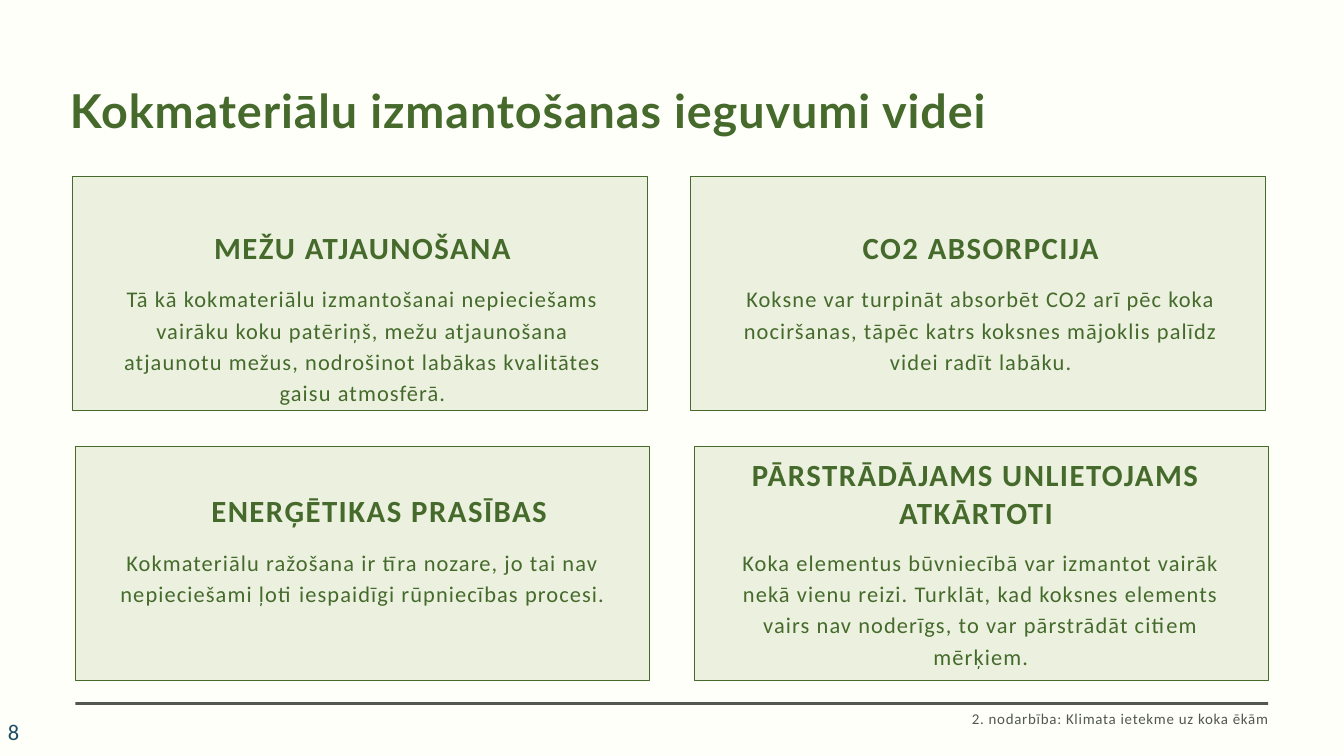
from dataclasses import dataclass

from pptx import Presentation
from pptx.dml.color import RGBColor
from pptx.enum.shapes import MSO_SHAPE
from pptx.enum.text import MSO_ANCHOR, MSO_AUTO_SIZE, PP_ALIGN
from pptx.util import Inches, Pt


@dataclass(frozen=True)
class TextStyle:
    size: float
    color: str
    spacing: float
    line_height: float = None
    bold: bool = False
    font: str = "Calibri"
    align: PP_ALIGN = PP_ALIGN.LEFT


@dataclass(frozen=True)
class Theme:
    background: str = "FEFFF8"
    green: str = "456A2C"
    card_fill: str = "EBF1DE"
    rule: str = "52584D"
    title: TextStyle = TextStyle(50, "456A2C", 1, 66.8, True, "Lato")
    heading: TextStyle = TextStyle(33, "456A2C", 1.6, 41.2, True, align=PP_ALIGN.CENTER)
    body: TextStyle = TextStyle(24, "456A2C", 1.2, 33.6, align=PP_ALIGN.CENTER)
    footer: TextStyle = TextStyle(16, "52584D", 0.8, 22.4, align=PP_ALIGN.RIGHT)
    number: TextStyle = TextStyle(24, "1E4D65", 1.2)


class SlideBuilder:
    def __init__(self, slide, theme):
        self.slide = slide
        self.theme = theme
        fill = slide.background.fill
        fill.solid()
        fill.fore_color.rgb = RGBColor.from_string(theme.background)

    def text(self, content, box, style, indent=0):
        shape = self.slide.shapes.add_textbox(*map(Inches, box))
        frame = shape.text_frame
        frame.word_wrap = True
        frame.auto_size = MSO_AUTO_SIZE.SHAPE_TO_FIT_TEXT
        frame.margin_left = frame.margin_right = 0
        frame.margin_top = frame.margin_bottom = 0
        paragraph = frame.paragraphs[0]
        run = paragraph.add_run()
        run.text = content
        run._r.get_or_add_rPr().set("spc", str(round(style.spacing * 100)))
        paragraph.alignment = style.align
        if style.line_height:
            paragraph.line_spacing = Pt(style.line_height)
        if indent:
            paragraph.level = 1
            properties = paragraph._p.get_or_add_pPr()
            properties.set("marL", str(Inches(indent)))
            properties.set("indent", "0")
        font = paragraph.font
        font.name = style.font
        font.size = Pt(style.size)
        font.bold = style.bold
        font.color.rgb = RGBColor.from_string(style.color)
        return frame

    def rectangle(self, box, fill, line=None):
        shape = self.slide.shapes.add_shape(MSO_SHAPE.RECTANGLE, *map(Inches, box))
        shape.shadow.inherit = False
        shape.fill.solid()
        shape.fill.fore_color.rgb = RGBColor.from_string(fill)
        if line:
            shape.line.color.rgb = RGBColor.from_string(line)
            shape.line.width = Pt(0.75)
        else:
            shape.line.fill.background()

    def card(self, corner, heading, heading_box, body, body_box, indent=0):
        self.rectangle((*corner, 8.55, 3.48), self.theme.card_fill, self.theme.green)
        self.text(heading, heading_box, self.theme.heading, indent)
        self.text(body, body_box, self.theme.body)

    def page_number(self, content, box):
        frame = self.text(content, box, self.theme.number)
        frame.auto_size = MSO_AUTO_SIZE.NONE
        frame.vertical_anchor = MSO_ANCHOR.MIDDLE
        frame.margin_left = frame.margin_right = Inches(0.1)
        frame.margin_top = frame.margin_bottom = Inches(0.05)


def main():
    presentation = Presentation()
    presentation.slide_width = Inches(20)
    presentation.slide_height = Inches(11.25)
    theme = Theme()
    builder = SlideBuilder(
        presentation.slides.add_slide(presentation.slide_layouts[6]), theme)

    # Title
    builder.text("Kokmateriālu izmantošanas ieguvumi videi",
                 (1.04, 1.12, 18.12, 0.86), theme.title)

    # Benefit cards: text columns and rows are shared
    left, right, width = 1.7, 10.9, 7.39
    upper, lower = 3.38, 7.3
    body_offset = 0.8
    builder.card(
        (1.08, 2.62),
        "MEŽU ATJAUNOŠANA", (left, upper, width, 0.55),
        "Tā kā kokmateriālu izmantošanai nepieciešams vairāku koku patēriņš, "
        "mežu atjaunošana atjaunotu mežus, nodrošinot labākas kvalitātes "
        "gaisu atmosfērā.",
        (left, upper + body_offset, width, 1.88))
    builder.card(
        (10.28, 2.62),
        "CO2 ABSORPCIJA", (right, upper, width, 0.55),
        "Koksne var turpināt absorbēt CO2 arī pēc koka nociršanas, tāpēc "
        "katrs koksnes mājoklis palīdz videi radīt labāku.",
        (right, upper + body_offset, width, 1.4))
    builder.card(
        (1.12, 6.64),
        "ENERĢĒTIKAS PRASĪBAS", (left, lower, width, 0.55),
        "Kokmateriālu ražošana ir tīra nozare, jo tai nav nepieciešami ļoti "
        "iespaidīgi rūpniecības procesi.",
        (left, lower + body_offset, width, 1.4), indent=0.5)
    builder.card(
        (10.33, 6.64),
        "PĀRSTRĀDĀJAMS UNLIETOJAMS ATKĀRTOTI", (10.75, 6.76, 7.55, 1.13),
        "Koka elementus būvniecībā var izmantot vairāk nekā vienu reizi. "
        "Turklāt, kad koksnes elements vairs nav noderīgs, to var pārstrādāt "
        "citiem mērķiem.",
        (right, lower + body_offset, width, 1.88))

    # Footer
    builder.rectangle((1.12, 10.45, 17.75, 0.04), theme.rule)
    builder.page_number("8", (0.02, 10.69, 2.33, 0.4))
    builder.text("2. nodarbība: Klimata ietekme uz koka ēkām",
                 (10.56, 10.52, 8.32, 0.6), theme.footer)

    presentation.save("out.pptx")


if __name__ == "__main__":
    main()
